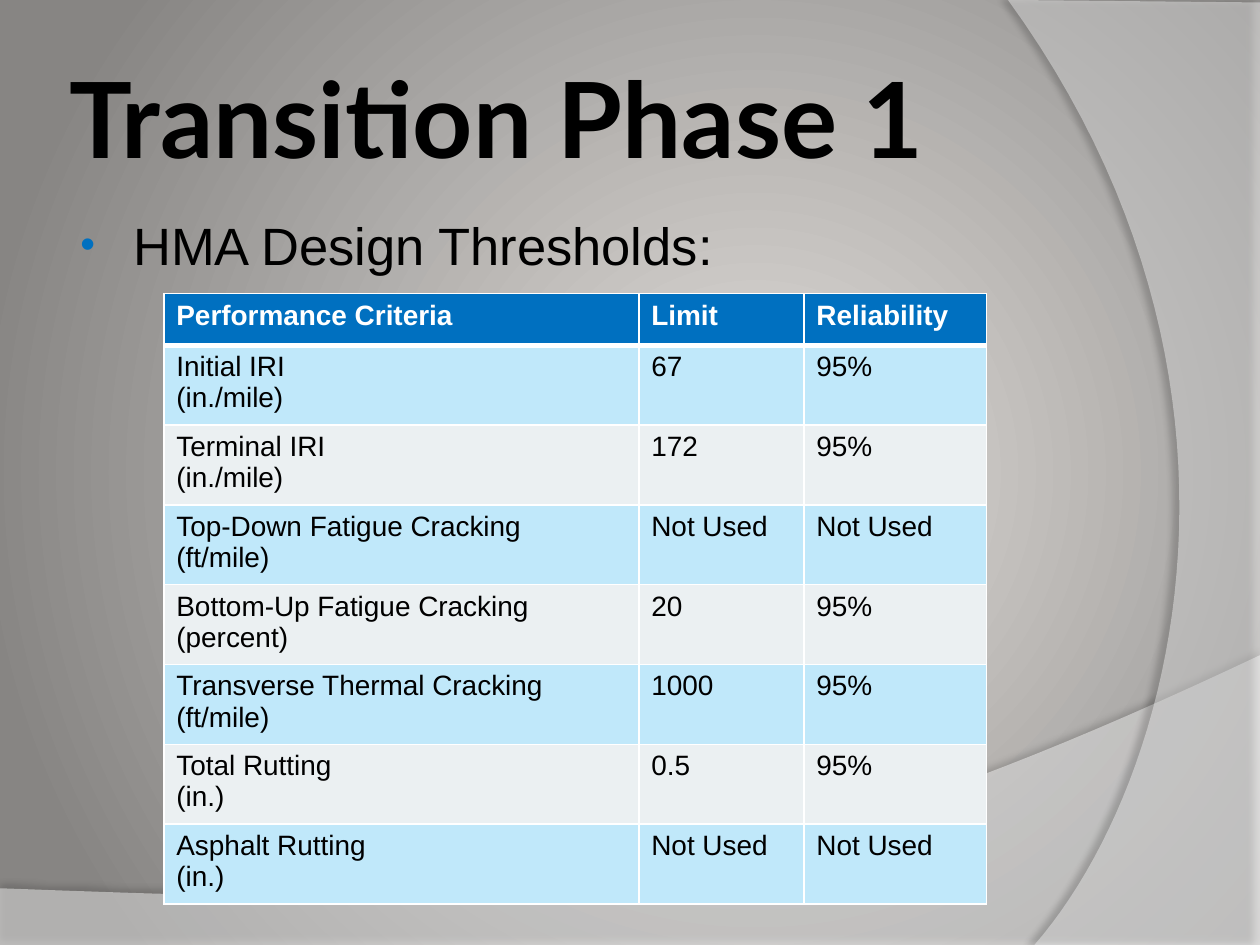
import dataclasses

import lxml.etree
import pptx
import pptx.dml.color
import pptx.enum.text
import pptx.oxml
import pptx.oxml.ns
import pptx.util

PX = 9144  # EMU in one px, 100 px to the inch
NS = 'xmlns:a="http://schemas.openxmlformats.org/drawingml/2006/main"'


@dataclasses.dataclass(frozen=True)
class Theme:
    black: str = "000000"
    white: str = "FFFFFF"
    accent: str = "0070C0"
    bands: tuple = ("C0E8FA", "EBF0F2")
    glow: str = "E0DDDA"
    edge: str = "878583"
    title_font: str = "Lato"
    body_font: str = "Arial"
    title_size: int = 60
    body_size: int = 30
    cell_size: int = 16


THEME = Theme()

ROWS = [
    (("Performance Criteria",), "Limit", "Reliability"),
    (("Initial IRI", "(in./mile)"), "67", "95%"),
    (("Terminal IRI", "(in./mile)"), "172", "95%"),
    (("Top-Down Fatigue Cracking", "(ft/mile)"), "Not Used", "Not Used"),
    (("Bottom-Up Fatigue Cracking", "(percent)"), "20", "95%"),
    (("Transverse Thermal Cracking", "(ft/mile)"), "1000", "95%"),
    (("Total Rutting", "(in.)"), "0.5", "95%"),
    (("Asphalt Rutting", "(in.)"), "Not Used", "Not Used"),
]


def px(*lengths):
    return [pptx.util.Emu(round(length * PX)) for length in lengths]


def rgb(value):
    return pptx.dml.color.RGBColor.from_string(value)


def xml(text):
    return pptx.oxml.parse_xml(text)


def add_span(para, text, font, size, color, bold=False):
    span = para.add_run()
    span.text = text
    span.font.name = font
    span.font.size = pptx.util.Pt(size)
    span.font.color.rgb = rgb(color)
    span.font.bold = bold


def curve(start, control_1, control_2, end, steps=48):
    """Points along a cubic curve, without its start."""
    points = []
    for step in range(1, steps + 1):
        t = step / steps
        weights = ((1 - t) ** 3, 3 * t * (1 - t) ** 2, 3 * t * t * (1 - t), t ** 3)
        corners = (start, control_1, control_2, end)
        points.append(tuple(sum(w * c[axis] for w, c in zip(weights, corners))
                            for axis in (0, 1)))
    return points


def add_background(page):
    fill = page.background.fill
    fill.gradient()
    stops = "".join(f'<a:gs pos="{pos}"><a:srgbClr val="{color}"/></a:gs>'
                    for pos, color in ((0, THEME.glow), (100000, THEME.edge)))
    gradient = page.element.find(".//" + pptx.oxml.ns.qn("a:gradFill"))
    gradient.getparent().replace(gradient, xml(
        f'<a:gradFill {NS} rotWithShape="1"><a:gsLst>{stops}</a:gsLst>'
        '<a:path path="circle"><a:fillToRect l="60000" t="50000" r="40000" b="50000"/>'
        '</a:path></a:gradFill>'))


def add_sheet(page, box, points, opacity, shadow_opacity, distance, direction):
    """Translucent outline with a soft shadow; points are relative to the box."""
    left, top = box
    first, *rest = [px(left + x, top + y) for x, y in points]
    builder = page.shapes.build_freeform(*first, scale=1.0)
    builder.add_line_segments(rest, close=True)
    sheet = builder.convert_to_shape()
    sheet.fill.solid()
    sheet.fill.fore_color.rgb = rgb(THEME.white)
    sheet.line.fill.background()
    color = sheet.element.spPr.find(pptx.oxml.ns.qn("a:solidFill"))[0]
    color.append(xml(f'<a:alpha {NS} val="{opacity * 1000}"/>'))
    sheet.element.spPr.append(xml(
        f'<a:effectLst {NS}><a:outerShdw blurRad="{pptx.util.Pt(4)}" '
        f'dist="{pptx.util.Pt(distance)}" dir="{direction * 60000}" algn="ctr" '
        f'rotWithShape="0"><a:srgbClr val="{THEME.black}">'
        f'<a:alpha val="{shadow_opacity * 1000}"/></a:srgbClr></a:outerShdw></a:effectLst>'))


def add_sheets(page):
    # Bottom wave
    wave = curve((1000, 0), (559, 209), (391, 199), (0, 185))
    add_sheet(page, (0, 520), [(0, 231), (1000, 231), (1000, 0)] + wave, 45, 35, 3.5, 270)
    # Right-hand arc
    arc = curve((21, 750), (135, 619), (218, 300), (0, 0))
    add_sheet(page, (800, 0), [(200, 2), (200, 750), (21, 750)] + arc, 40, 45, 4, 180)


def add_title(page, box):
    frame = page.shapes.add_textbox(*px(*box)).text_frame
    frame.word_wrap = True
    frame.vertical_anchor = pptx.enum.text.MSO_ANCHOR.MIDDLE
    frame.margin_left, frame.margin_top, frame.margin_right, frame.margin_bottom = px(5, 5, 5, 5)
    add_span(frame.paragraphs[0], "Transition Phase 1", THEME.title_font,
             THEME.title_size, THEME.black, True)


def set_borders(cell, **widths):
    properties = cell._tc.get_or_add_tcPr()
    for index, side in enumerate(("L", "R", "T", "B")):
        width = pptx.util.Pt(widths.get(side, 1))
        properties.insert(index, xml(
            f'<a:ln{side} {NS} w="{width}"><a:solidFill>'
            f'<a:srgbClr val="{THEME.white}"/></a:solidFill></a:ln{side}>'))


def add_criteria_table(page, box):
    left, top, widths, row_height = box
    frame = page.shapes.add_table(len(ROWS), len(widths), *px(
        left, top, sum(widths), row_height * len(ROWS)))
    table = frame.table
    for column, width in zip(table.columns, px(*widths)):
        column.width = width
    for number, (criterion, limit, reliability) in enumerate(ROWS):
        header = number == 0
        fill = THEME.accent if header else THEME.bands[(number - 1) % 2]
        color = THEME.white if header else THEME.black
        for column, lines in enumerate((criterion, (limit,), (reliability,))):
            cell = table.cell(number, column)
            cell.fill.solid()
            cell.fill.fore_color.rgb = rgb(fill)
            # Heavy rule between the header and the first row
            set_borders(cell, B=3 if header else 1, T=3 if number == 1 else 1)
            for index, line in enumerate(lines):
                frame = cell.text_frame
                para = frame.add_paragraph() if index else frame.paragraphs[0]
                add_span(para, line, THEME.body_font, THEME.cell_size, color, header)


def add_bullet(page, box):
    frame = page.shapes.add_textbox(*px(*box)).text_frame
    frame.word_wrap = True
    frame.auto_size = pptx.enum.text.MSO_AUTO_SIZE.SHAPE_TO_FIT_TEXT
    para = frame.paragraphs[0]
    add_span(para, "HMA Design Thresholds:", THEME.body_font, THEME.body_size, THEME.black)
    properties = para._p.get_or_add_pPr()
    margin, indent = px(46, -42)
    properties.set("marL", str(margin))
    properties.set("indent", str(indent))
    for part in (f'<a:spcBef {NS}><a:spcPct val="20000"/></a:spcBef>',
                 f'<a:buClr {NS}><a:srgbClr val="{THEME.accent}"/></a:buClr>',
                 f'<a:buSzPct {NS} val="80000"/>',
                 f'<a:buFont {NS} typeface="{THEME.body_font}"/>',
                 f'<a:buChar {NS} char="•"/>'):
        properties.append(xml(part))


def main():
    deck = pptx.Presentation()
    deck.slide_width, deck.slide_height = px(1000, 750)
    page = deck.slides.add_slide(deck.slide_layouts[6])
    add_background(page)
    add_sheets(page)
    add_title(page, (50, 30, 817, 125))
    add_criteria_table(page, (130, 233, (377, 131, 145), 41))
    add_bullet(page, (50, 164, 833, 61))
    deck.save("out.pptx")


if __name__ == "__main__":
    main()
